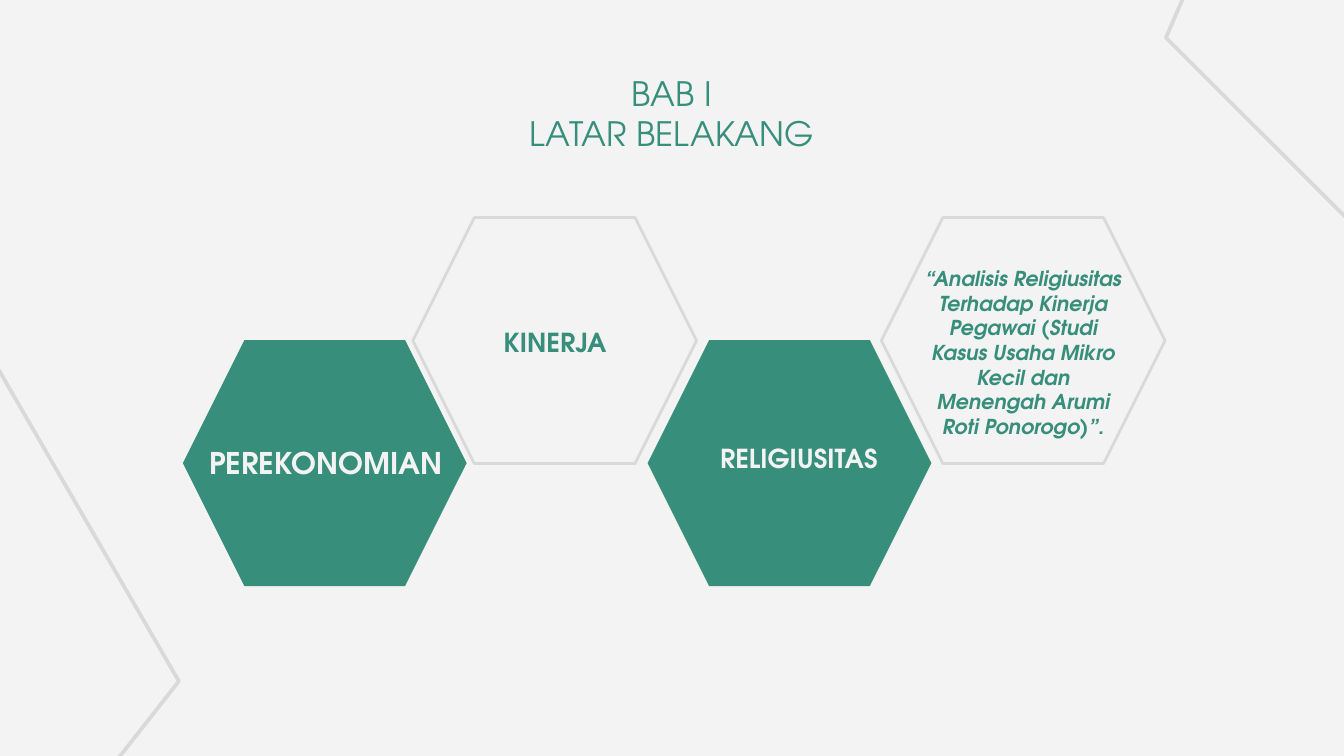
import copy
from dataclasses import dataclass

import pptx
import pptx.dml.color
import pptx.enum.shapes
import pptx.enum.text
import pptx.oxml.ns
import pptx.util

Pt = pptx.util.Pt
RGBColor = pptx.dml.color.RGBColor
MSO_ANCHOR = pptx.enum.text.MSO_ANCHOR

GREEN = RGBColor(0x37, 0x8E, 0x7B)
PALE = RGBColor(0xF3, 0xF3, 0xF3)
GREY = RGBColor(0xD9, 0xD9, 0xD9)
FONT = "TeX Gyre Adventor"

HEXAGON_WIDTH, HEXAGON_HEIGHT = 152, 131.8
UPPER_ROW, LOWER_ROW = 116.6, 182.2


@dataclass
class Topic:
    """A hexagon and the label laid over it; lengths in points."""
    text: str
    left: float
    filled: bool
    label_box: tuple[float, float, float, float]
    size: float
    italic: bool = False


TOPICS = [
    Topic("PEREKONOMIAN", 98, True, (95.4, 205.5, 158.4, 59), 16),
    Topic("KINERJA", 221.2, False, (256.7, 157.9, 81.4, 41), 14),
    Topic("RELIGIUSITAS", 347, True, (366.9, 234.9, 122.4, 26), 14),
    Topic("“Analisis Religiusitas Terhadap Kinerja Pegawai (Studi Kasus Usaha "
          "Mikro Kecil dan Menengah Arumi Roti Ponorogo)”.",
          472.2, False, (485.7, 162.2, 125.3, 80), 11, italic=True),
]

# Corner lines that run off the slide's edges
CORNER_LINES = [
    [(-13.7, 175.7), (95.8, 365), (27.4, 452.2)],
    [(779.5, 175), (624.6, 20.2), (668.5, -81.4)],
]


def write_text(shape, text: str, *, size: float, color: RGBColor,
               bold: bool = False, italic: bool = False,
               anchor=MSO_ANCHOR.BOTTOM) -> None:
    frame = shape.text_frame
    frame.word_wrap = True
    frame.auto_size = pptx.enum.text.MSO_AUTO_SIZE.NONE
    frame.vertical_anchor = anchor
    frame.margin_left = frame.margin_right = Pt(7.2)
    frame.margin_top = frame.margin_bottom = Pt(7.2)
    paragraph = frame.paragraphs[0]
    paragraph.text = text
    paragraph.alignment = pptx.enum.text.PP_ALIGN.CENTER
    for run in paragraph.runs:
        run.font.name = FONT
        run.font.size = Pt(size)
        run.font.bold = bold
        run.font.italic = italic
        run.font.color.rgb = color
    # Line breaks take the size of the text around them
    for line_break in paragraph._p.findall(pptx.oxml.ns.qn("a:br")):
        line_break.insert(0, copy.deepcopy(paragraph.runs[0]._r.rPr))


def draw_hexagon(slide, topic: Topic) -> None:
    top = LOWER_ROW if topic.filled else UPPER_ROW
    hexagon = slide.shapes.add_shape(
        pptx.enum.shapes.MSO_SHAPE.HEXAGON, Pt(topic.left), Pt(top),
        Pt(HEXAGON_WIDTH), Pt(HEXAGON_HEIGHT))
    hexagon.shadow.inherit = False
    if topic.filled:
        hexagon.fill.solid()
        hexagon.fill.fore_color.rgb = GREEN
        hexagon.line.fill.background()
    else:
        hexagon.fill.background()
        hexagon.line.color.rgb = GREY
        hexagon.line.width = Pt(1.5)


def draw_label(slide, topic: Topic) -> None:
    label = slide.shapes.add_textbox(*map(Pt, topic.label_box))
    write_text(label, topic.text, size=topic.size, bold=True,
               italic=topic.italic, color=PALE if topic.filled else GREEN)


def draw_corner_line(slide, points: list[tuple[float, float]]) -> None:
    start, *rest = [(Pt(x), Pt(y)) for x, y in points]
    builder = slide.shapes.build_freeform(*start)
    builder.add_line_segments(rest, close=False)
    corner = builder.convert_to_shape()
    corner.shadow.inherit = False
    corner.fill.background()
    corner.line.color.rgb = GREY
    corner.line.width = Pt(2)


def main() -> None:
    deck = pptx.Presentation()
    deck.slide_width, deck.slide_height = Pt(720), Pt(405)
    slide = deck.slides.add_slide(deck.slide_layouts[5])
    slide.background.fill.solid()
    slide.background.fill.fore_color.rgb = PALE

    # Heading
    heading = slide.shapes.title
    heading.left, heading.top = Pt(242.6), Pt(31.7)
    heading.width, heading.height = Pt(234.7), Pt(54)
    write_text(heading, "BAB I\vLATAR BELAKANG", size=18, color=GREEN,
               anchor=MSO_ANCHOR.TOP)

    # Corner decoration
    for points in CORNER_LINES:
        draw_corner_line(slide, points)

    # Hexagons first, then their labels on top
    for topic in TOPICS:
        draw_hexagon(slide, topic)
    for topic in TOPICS:
        draw_label(slide, topic)

    deck.save("out.pptx")


if __name__ == "__main__":
    main()
